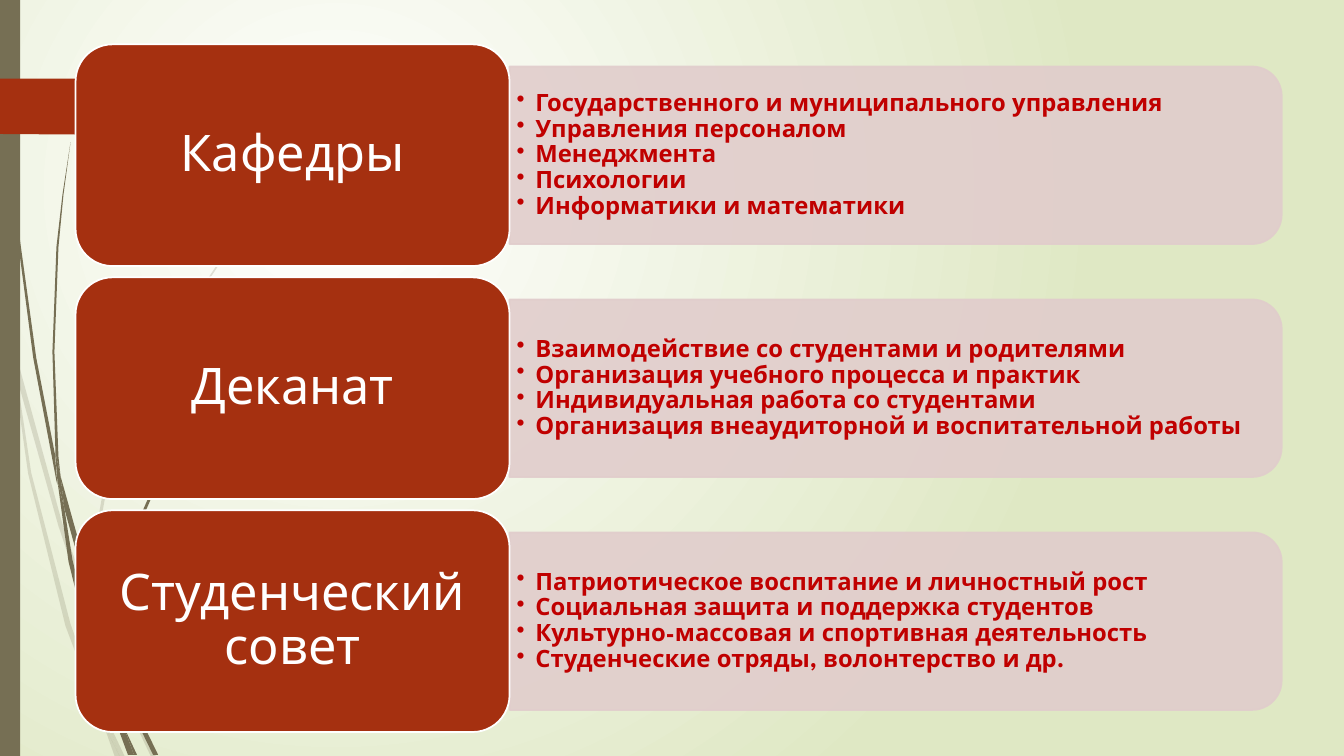
import pptx
import pptx.dml.color
import pptx.enum.dml
import pptx.enum.shapes
import pptx.enum.text
import pptx.oxml.ns
import pptx.util
from lxml import etree

Pt = pptx.util.Pt
SHAPES = pptx.enum.shapes.MSO_SHAPE
ALIGN = pptx.enum.text.PP_ALIGN
OLIVE, RUST, WHITE = "766F54", "A53010", "FFFFFF"
GRID = 0.72

PALE_STEMS = [
    [(11, 350), (9, 322), (0, 282), (0, 299), (10, 344)],
    [(58, 522), (84, 599), (85, 586), (62, 520), (14, 345), (17, 376)],
    [(92, 607), (88, 596), (88, 610), (123, 694), (150, 751), (155, 751), (127, 692)],
    [(119, 751), (124, 751), (105, 711)],
    [(93, 683), (70, 619), (31, 469), (17, 376), (11, 350), (28, 470), (65, 621),
     (92, 693), (101, 714), (99, 707)],
    [(88, 584), (110, 462), (160, 349), (229, 245), (268, 198), (290, 175), (312, 154),
     (312, 153), (289, 175), (268, 197), (228, 244), (158, 348), (107, 461), (85, 584),
     (85, 586), (88, 596)],
    [(101, 714), (114, 751), (119, 751)],
    [(96, 692), (93, 683), (99, 707), (101, 714), (119, 751), (105, 711)],
]
DARK_STEMS = [
    [(7, 110), (17, 233), (33, 355), (56, 477), (57, 481), (55, 457), (55, 453),
     (36, 355), (19, 232), (8, 109), (5, 48), (4, 0), (3, 0), (4, 48)],
    [(88, 592), (106, 645), (106, 633), (106, 631), (93, 590), (60, 472), (64, 505)],
    [(113, 649), (110, 641), (111, 656), (132, 708), (152, 749), (157, 749), (136, 706)],
    [(110, 691), (98, 657), (72, 556), (64, 505), (57, 477), (68, 557), (93, 659),
     (111, 708), (117, 722), (116, 717)],
    [(60, 472), (58, 453), (54, 349), (58, 245), (63, 193), (70, 141), (62, 193),
     (56, 245), (52, 349), (55, 449)],
    [(133, 749), (136, 749), (122, 719)],
    [(57, 477), (64, 505), (60, 472), (55, 449), (55, 453)],
    [(111, 633), (125, 552), (158, 476), (205, 406), (231, 374), (245, 359), (261, 344),
     (260, 344), (245, 358), (231, 373), (204, 405), (156, 474), (122, 551), (106, 631),
     (110, 641)],
    [(117, 722), (127, 749), (131, 749)],
    [(116, 706), (110, 691), (116, 717), (117, 722), (130, 749), (133, 749), (122, 719)],
]
TAG = [(0, 78), (146, 78), (148, 79), (173, 104), (173, 108), (148, 133), (146, 134), (0, 133)]

ROWS = [
    ("Кафедры", ["Государственного и муниципального управления", "Управления персоналом",
                 "Менеджмента", "Психологии", "Информатики и математики"]),
    ("Деканат", ["Взаимодействие со студентами и родителями",
                 "Организация учебного процесса и практик",
                 "Индивидуальная работа со студентами",
                 "Организация внеаудиторной и воспитательной работы"]),
    ("Студенческий совет", ["Патриотическое воспитание и личностный рост",
                            "Социальная защита и поддержка студентов",
                            "Культурно-массовая и спортивная деятельность",
                            "Студенческие отряды, волонтерство и др."]),
]


def rgb(value):
    return pptx.dml.color.RGBColor.from_string(value)


def add_element(parent, tag, **attributes):
    return etree.SubElement(parent, pptx.oxml.ns.qn(tag), attributes)


class Board:
    font = "League Spartan"

    def __init__(self, slide):
        self.slide = slide

    def background(self, inner, outer):
        fill = self.slide.background.fill
        fill.gradient()
        for stop, color in zip(fill.gradient_stops, (inner, outer)):
            stop.color.rgb = rgb(color)
        gradient = self.slide.element.xpath(".//p:bg//a:gradFill")[0]
        for linear in gradient.xpath("a:lin"):
            gradient.remove(linear)
        radial = add_element(gradient, "a:path", path="circle")
        add_element(radial, "a:fillToRect", l="50000", t="50000", r="100000", b="100000")

    def paint(self, shape, color, line=None, opacity=100):
        shape.shadow.inherit = False
        shape.fill.solid()
        shape.fill.fore_color.rgb = rgb(color)
        if line:
            shape.line.color.rgb = rgb(line)
            shape.line.width = Pt(1.25)
        else:
            shape.line.fill.background()
        if opacity < 100:
            for node in shape.element.xpath("p:spPr//a:solidFill/a:srgbClr"):
                add_element(node, "a:alpha", val=str(opacity * 1000))

    def outline(self, points, color, opacity=100):
        builder = self.slide.shapes.build_freeform(*points[0], scale=Pt(GRID))
        builder.add_line_segments(points[1:], close=True)
        self.paint(builder.convert_to_shape(), color, opacity=opacity)

    def block(self, kind, left, top, width, height, color, line=None, opacity=100, rotation=0):
        shape = self.slide.shapes.add_shape(kind, Pt(left), Pt(top), Pt(width), Pt(height))
        shape.rotation = rotation
        self.paint(shape, color, line, opacity)

    def text(self, lines, left, top, width, height, size, color, margins, bullets=False):
        box = self.slide.shapes.add_textbox(Pt(left), Pt(top), Pt(width), Pt(height))
        frame = box.text_frame
        frame.word_wrap = True
        frame.auto_size = pptx.enum.text.MSO_AUTO_SIZE.TEXT_TO_FIT_SHAPE
        frame.vertical_anchor = pptx.enum.text.MSO_ANCHOR.MIDDLE
        frame.margin_left = frame.margin_right = Pt(margins[0])
        frame.margin_top = frame.margin_bottom = Pt(margins[1])
        for index, line in enumerate(lines):
            paragraph = frame.add_paragraph() if index else frame.paragraphs[0]
            paragraph.line_spacing = 0.9
            paragraph.alignment = ALIGN.LEFT if bullets else ALIGN.CENTER
            if bullets:
                self.bullet(paragraph)
            run = paragraph.add_run()
            run.text = line
            run.font.name = self.font
            run.font.size = Pt(size)
            run.font.bold = bullets
            run.font.color.rgb = rgb(color)

    def bullet(self, paragraph):
        paragraph.level = 1
        properties = paragraph._p.get_or_add_pPr()
        properties.set("marL", str(Pt(13.5)))
        properties.set("indent", str(-Pt(13.5)))
        add_element(properties, "a:buChar", char="•")


def main():
    presentation = pptx.Presentation()
    presentation.slide_width, presentation.slide_height = Pt(960), Pt(540)
    board = Board(presentation.slides.add_slide(presentation.slide_layouts[6]))
    board.background(WHITE, "DFE8C4")
    for stem in PALE_STEMS:
        board.outline(stem, OLIVE, opacity=20)
    for stem in DARK_STEMS:
        board.outline(stem, OLIVE)
    board.block(SHAPES.RECTANGLE, 0, 0, 14.4, 540, OLIVE)
    board.outline(TAG, RUST)

    left, top, width, height, pitch = 54, 31.7, 310, 158.4, 166.4
    panel_width, panel_height = 551.5, 126.8
    panel_left = left + width
    for index, (title, items) in enumerate(ROWS):
        row_top = top + index * pitch
        middle = row_top + height / 2
        board.block(SHAPES.ROUND_2_SAME_RECTANGLE,
                    panel_left + (panel_width - panel_height) / 2, middle - panel_width / 2,
                    panel_height, panel_width, "E1CDCC", "E1CDCC", 90, 90)
        board.text(items, panel_left, middle - 57.2, 545, 114.4, 17, "C00000", (5, 3), True)
        board.block(SHAPES.ROUNDED_RECTANGLE, left, row_top, width, height, RUST, WHITE)
        board.text([title], left + 7.7, row_top + 7.7, width - 15.4, height - 15.4,
                   36, WHITE, (10.8, 5.4))
    presentation.save("out.pptx")


if __name__ == "__main__":
    main()
